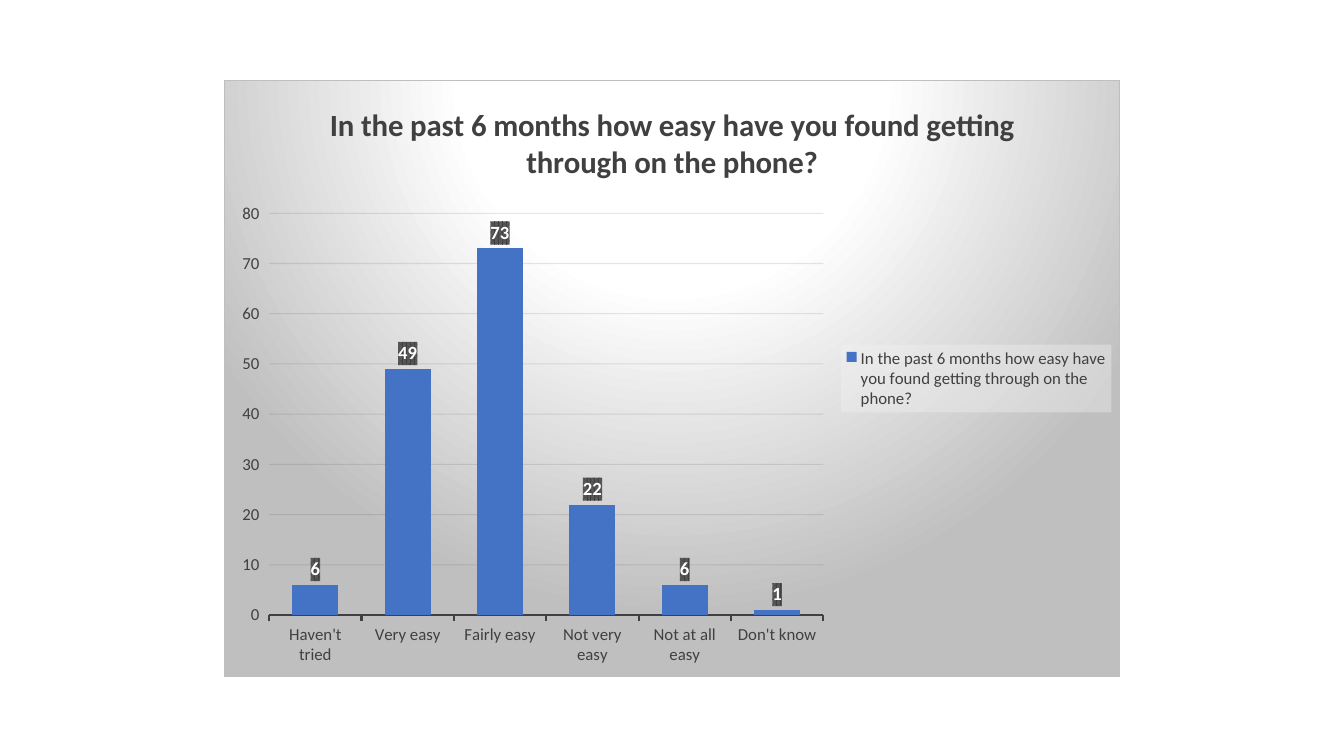
from lxml import etree
from pptx import Presentation
from pptx.chart.data import CategoryChartData
from pptx.dml.color import RGBColor
from pptx.enum.chart import XL_CHART_TYPE, XL_LABEL_POSITION, XL_LEGEND_POSITION, XL_TICK_MARK
from pptx.oxml.ns import nsdecls
from pptx.util import Inches, Pt

COLUMN = XL_CHART_TYPE.COLUMN_CLUSTERED
OUTSIDE_END = XL_LABEL_POSITION.OUTSIDE_END
RIGHT = XL_LEGEND_POSITION.RIGHT
TICK_OUT = XL_TICK_MARK.OUTSIDE

QUESTION = "In the past 6 months how easy have you found getting through on the phone?"
ANSWERS = {
    "Haven't tried": 6,
    "Very easy": 49,
    "Fairly easy": 73,
    "Not very easy": 22,
    "Not at all easy": 6,
    "Don't know": 1,
}
DARK, WHITE, BLUE, GRAY = "404040", "FFFFFF", "4472C4", "BFBFBF"


def rgb(color):
    return RGBColor.from_string(color)


def add_sppr(parent, content):
    """Put shape properties right before the text properties of a chart part."""
    xml = f'<c:spPr {nsdecls("c", "a")}>{content}</c:spPr>'
    parent.find("{*}txPr").addprevious(etree.fromstring(xml))


prs = Presentation()
prs.slide_width, prs.slide_height = Inches(13.33), Inches(7.5)
s = prs.slides.add_slide(prs.slide_layouts[6])

data = CategoryChartData()
data.categories = list(ANSWERS)
data.add_series(QUESTION, list(ANSWERS.values()))
chart = s.shapes.add_chart(
    COLUMN, Inches(2.22), Inches(0.79), Inches(8.89), Inches(5.93), data
).chart

# Title, legend, plot and series
chart.has_title = True
title = chart.chart_title.text_frame
title.text = QUESTION
chart.has_legend = True
legend = chart.legend
legend.position = RIGHT
legend.include_in_layout = False
plot = chart.plots[0]
plot.gap_width = 100
plot.vary_by_categories = False
bars = plot.series[0]
bars.format.fill.solid()
bars.format.fill.fore_color.rgb = rgb(BLUE)
labels = bars.data_labels
labels.show_value = True
labels.position = OUTSIDE_END

# Axes
cat_axis, val_axis = chart.category_axis, chart.value_axis
for axis in (cat_axis, val_axis):
    axis.major_tick_mark = TICK_OUT
cat_axis.format.line.color.rgb = rgb(DARK)
cat_axis.format.line.width = Pt(1.5)
val_axis.format.line.fill.background()
val_axis.minimum_scale, val_axis.maximum_scale, val_axis.major_unit = 0, 80, 10
grid = val_axis.major_gridlines.format.line
grid.color.rgb = rgb("0D0D0D")
grid.width = Pt(0.75)
grid_color = grid.fill._xPr.find(".//{*}srgbClr")
etree.SubElement(grid_color, grid_color.tag.replace("srgbClr", "alpha"), val="10000")

# Fonts
for font, size, color, bold in (
    (chart.font, 10, "000000", False),
    (title.paragraphs[0].runs[0].font, 22, DARK, True),
    (legend.font, 12, DARK, False),
    (cat_axis.tick_labels.font, 12, DARK, False),
    (val_axis.tick_labels.font, 12, DARK, False),
    (labels.font, 13.3, WHITE, True),
):
    for name, value in {"name": "Calibri", "size": Pt(size), "bold": bold}.items():
        setattr(font, name, value)
    font.color.rgb = rgb(color)

# Backgrounds of the chart, the legend and the value labels
stops = "".join(
    f'<a:gs pos="{pos * 1000}"><a:srgbClr val="{color}"/></a:gs>'
    for pos, color in ((0, WHITE), (39, WHITE), (100, GRAY))
)
add_sppr(
    chart.font._element.getparent().getparent().getparent().getparent(),
    f'<a:gradFill><a:gsLst>{stops}</a:gsLst><a:path path="circle">'
    '<a:fillToRect l="50000" t="-80000" r="50000" b="180000"/></a:path></a:gradFill>'
    f'<a:ln w="{Pt(0.75)}"><a:solidFill><a:srgbClr val="{GRAY}"/></a:solidFill></a:ln>',
)
add_sppr(
    legend._element,
    '<a:solidFill><a:srgbClr val="F2F2F2"><a:alpha val="39000"/></a:srgbClr></a:solidFill>',
)
add_sppr(
    labels._element,
    f'<a:pattFill prst="pct75"><a:fgClr><a:srgbClr val="{DARK}"/></a:fgClr>'
    '<a:bgClr><a:srgbClr val="595959"/></a:bgClr></a:pattFill>',
)

prs.save("out.pptx")
